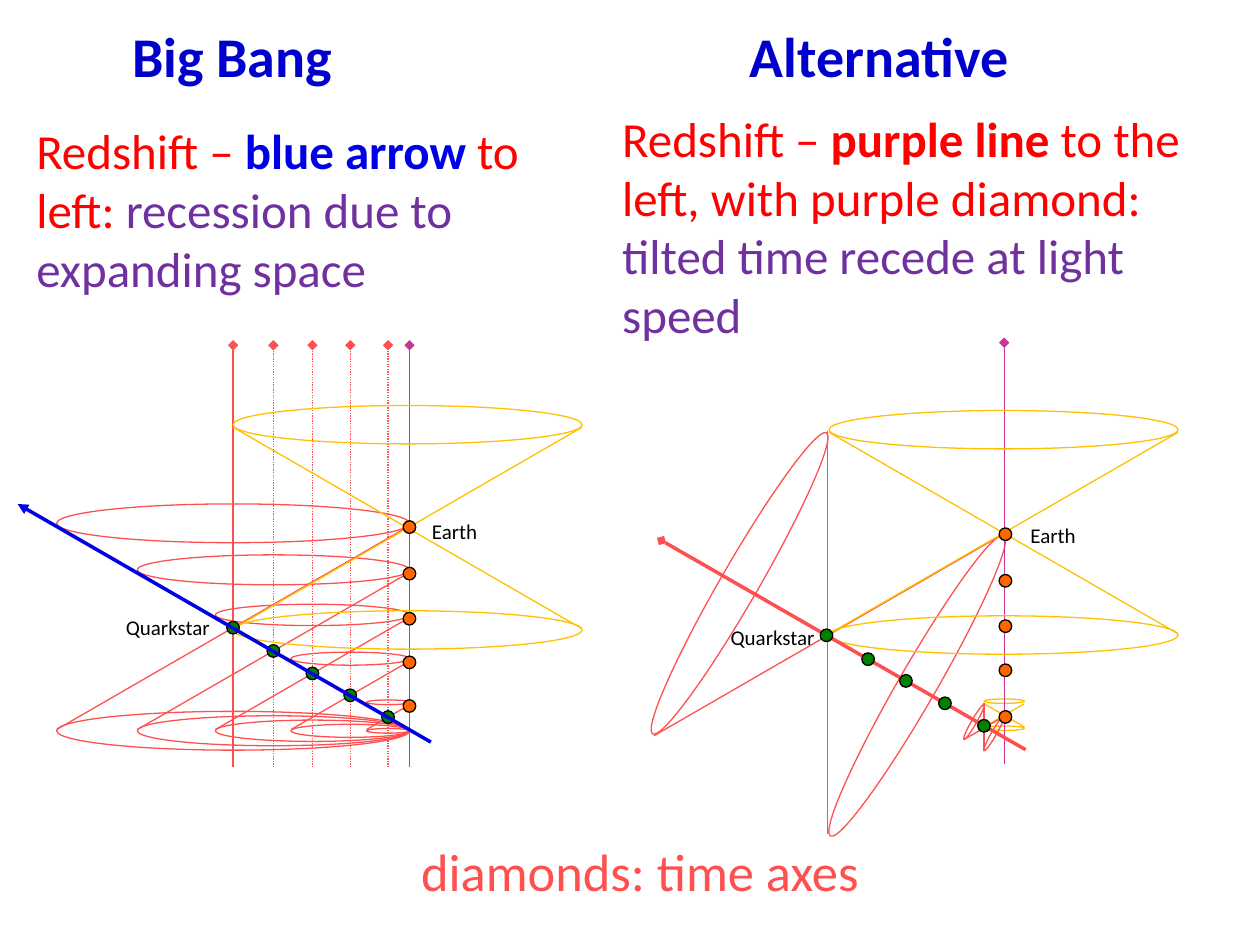
"""Build the slide comparing light cones in the Big Bang and an alternative model."""
from math import sqrt
from typing import NamedTuple

from lxml import etree
from pptx import Presentation
from pptx import util as u
from pptx.dml import color
from pptx.enum import dml, shapes, text
from pptx.oxml import ns

RED, YELLOW, PURPLE = "FF5050", "FFC000", "CC3399"
GREEN, ORANGE, BLUE, BLACK = "008000", "FF6600", "0000E6", "000000"
PURE_RED, VIOLET, TITLE_BLUE = "FF0000", "7030A0", "0000CC"
DOT = 0.1


class Line(NamedTuple):
    start: tuple[float, float]
    end: tuple[float, float]
    line_color: str = RED
    width: float = 0.75
    arrow: str = ""
    dotted: bool = False


class Ellipse(NamedTuple):
    center: tuple[float, float]
    width: float
    height: float
    line_color: str = RED
    rotation: float = 0
    fill: str = ""


class Cone(NamedTuple):
    left: float
    bottom: float
    width: float
    line_color: str

    @property
    def height(self) -> float:
        return self.width / sqrt(3)

    @property
    def top(self) -> float:
        return self.bottom - self.height


class Run(NamedTuple):
    words: str
    color: str
    bold: bool = False


class Label(NamedTuple):
    box: tuple[float, float, float, float]
    runs: list[Run]
    size: float
    frame: dict = {}
    paragraph: dict = {}
    tab: float = 0


def rgb(value: str) -> color.RGBColor:
    """Turn a hex string into a colour."""
    return color.RGBColor.from_string(value)


def apply(target, values: dict) -> None:
    """Set each named attribute on the target."""
    for name, value in values.items():
        setattr(target, name, value)


def draw_line(slide, item: Line):
    """Draw a straight connector with an optional end marker."""
    points = [u.Inches(value) for value in (*item.start, *item.end)]
    connector = slide.shapes.add_connector(shapes.MSO_CONNECTOR.STRAIGHT, *points)
    connector.line.color.rgb = rgb(item.line_color)
    connector.line.width = u.Pt(item.width)
    if item.dotted:
        connector.line.dash_style = dml.MSO_LINE.ROUND_DOT
    if item.arrow:
        etree.SubElement(connector.line._get_or_add_ln(), ns.qn("a:tailEnd"), type=item.arrow)
    etree.SubElement(connector._element.spPr, ns.qn("a:effectLst"))
    return connector


def draw_ellipse(slide, item: Ellipse):
    """Draw an ellipse around its centre."""
    x, y = item.center
    box = (x - item.width / 2, y - item.height / 2, item.width, item.height)
    shape = slide.shapes.add_shape(shapes.MSO_SHAPE.OVAL, *map(u.Inches, box))
    shape.shadow.inherit = False
    shape.rotation = item.rotation
    if item.fill:
        shape.fill.solid()
        shape.fill.fore_color.rgb = rgb(item.fill)
    else:
        shape.fill.background()
    shape.line.color.rgb = rgb(item.line_color)
    shape.line.width = u.Pt(0.75)
    return shape


def draw_dot(slide, x: float, y: float, fill: str) -> None:
    """Draw an event dot on a worldline."""
    draw_ellipse(slide, Ellipse((x, y), DOT, DOT, BLACK, fill=fill))


def draw_cone(slide, cone: Cone) -> None:
    """Draw a double light cone from two rims and two crossing rays."""
    right, middle = cone.left + cone.width, cone.left + cone.width / 2
    for y in (cone.bottom + 0.01, cone.top - 0.02):
        draw_ellipse(slide, Ellipse((middle, y), cone.width, cone.width * 0.11, cone.line_color))
    for start, end in ((right, cone.left), (cone.left, right)):
        draw_line(slide, Line((start, cone.bottom), (end, cone.top), cone.line_color))


def draw_label(slide, label: Label):
    """Write a text box of styled runs."""
    shape = slide.shapes.add_textbox(*map(u.Inches, label.box))
    apply(shape.text_frame, {"word_wrap": True, **label.frame})
    paragraph = shape.text_frame.paragraphs[0]
    apply(paragraph, label.paragraph)
    if label.tab:
        tabs = etree.SubElement(paragraph._p.get_or_add_pPr(), ns.qn("a:tabLst"))
        etree.SubElement(tabs, ns.qn("a:tab"), pos=str(u.Inches(label.tab)), algn="l")
    for item in label.runs:
        run = paragraph.add_run()
        run.text = item.words
        apply(run.font, {"name": "Calibri", "size": u.Pt(label.size), "bold": item.bold})
        run.font.color.rgb = rgb(item.color)
    return shape


def draw_big_bang(slide) -> None:
    """Draw the expanding-space diagram."""
    earth_x, base = 3.25, 5.79
    axes = (1.85, 2.17, 2.48, 2.78, 3.08)
    cones = [Cone(2 * x - earth_x, base, 2 * (earth_x - x), RED) for x in axes]
    for x in axes:
        draw_line(slide, Line((x, 6.09), (x, 2.74), arrow="diamond", dotted=x != axes[0]))
    draw_line(slide, Line((earth_x, 6.09), (earth_x, 2.74), PURPLE, arrow="diamond"))
    for cone in (*cones, Cone(1.85, 4.99, 2.77, YELLOW)):
        draw_cone(slide, cone)
    for x, cone in zip(axes, cones):
        draw_dot(slide, x, base - cone.height / 2, GREEN)
        draw_dot(slide, earth_x, cone.top + 0.01, ORANGE)
    draw_line(slide, Line((3.42, 5.89), (0.14, 4), BLUE, 2, "triangle"))


def draw_alternative(slide) -> None:
    """Draw the tilted-time diagram."""
    earth_x = 7.98
    draw_cone(slide, Cone(7.81, 5.77, 0.32, YELLOW))
    for center, width, height in (((7.89, 5.82), 0.32, 0.04), ((7.73, 5.73), 0.32, 0.04),
                                  ((7.28, 5.44), 2.76, 0.3), ((5.87, 4.63), 2.76, 0.3)):
        draw_ellipse(slide, Ellipse(center, width, height, rotation=300))
    for start, end in (((7.98, 5.68), (7.65, 5.87)), ((7.81, 5.96), (7.81, 5.58)),
                       ((7.96, 4.24), (5.19, 5.84)), ((6.57, 6.62), (6.57, 3.42))):
        draw_line(slide, Line(start, end))
    draw_line(slide, Line((7.97, 6.06), (7.97, 2.72), PURPLE, arrow="diamond"))
    draw_cone(slide, Cone(6.58, 5.03, 2.77, YELLOW))
    start, end = (8.14, 5.95), (5.25, 4.29)
    draw_line(slide, Line(start, end, RED, 2, "diamond"))
    slope = (start[1] - end[1]) / (start[0] - end[0])
    for x in (6.56, 6.89, 7.19, 7.5, 7.81):
        draw_dot(slide, x, start[1] - (start[0] - x) * slope, GREEN)
    for y in (4.24, 4.61, 4.97, 5.32, 5.69):
        draw_dot(slide, earth_x, y, ORANGE)


def main() -> None:
    """Build and save the slide."""
    presentation = Presentation()
    apply(presentation, {"slide_width": u.Inches(10), "slide_height": u.Inches(7.5)})
    slide = presentation.slides.add_slide(presentation.slide_layouts[6])
    grow = {"auto_size": text.MSO_AUTO_SIZE.SHAPE_TO_FIT_TEXT}
    draw_alternative(slide)
    draw_big_bang(slide)
    labels = [
        Label((0.75, 0.12, 7.56, 0.64), [Run("Big Bang\tAlternative", TITLE_BLUE, True)], 32,
              {**grow, "margin_left": u.Inches(0.3)}, tab=4.9),
        Label((0.19, 0.91, 4.34, 1.68),
              [Run("Redshift – ", PURE_RED), Run("blue arrow ", BLUE, True),
               Run("to left: ", PURE_RED), Run("recession due to expanding space", VIOLET)], 28, grow),
        Label((4.84, 0.81, 4.96, 2.15),
              [Run("Redshift – ", PURE_RED), Run("purple line ", PURE_RED, True),
               Run("to the left, with purple diamond: ", PURE_RED),
               Run("tilted time recede at light speed", VIOLET)], 28, grow),
        Label((0.75, 6.61, 8.66, 0.61), [Run("diamonds: time axes", RED)], 30, grow,
              {"alignment": text.PP_ALIGN.CENTER}),
    ]
    for words, x, y, width in (("Earth", 3.33, 4.07, 0.8), ("Quarkstar", 0.9, 4.83, 0.92),
                               ("Earth", 8.08, 4.1, 0.8), ("Quarkstar", 5.7, 4.91, 0.88)):
        labels.append(Label((x, y, width, 0.4), [Run(words, BLACK)], 12,
                            paragraph={"space_after": u.Pt(10)}))
    for label in labels:
        draw_label(slide, label)
    presentation.save("out.pptx")


if __name__ == "__main__":
    main()
